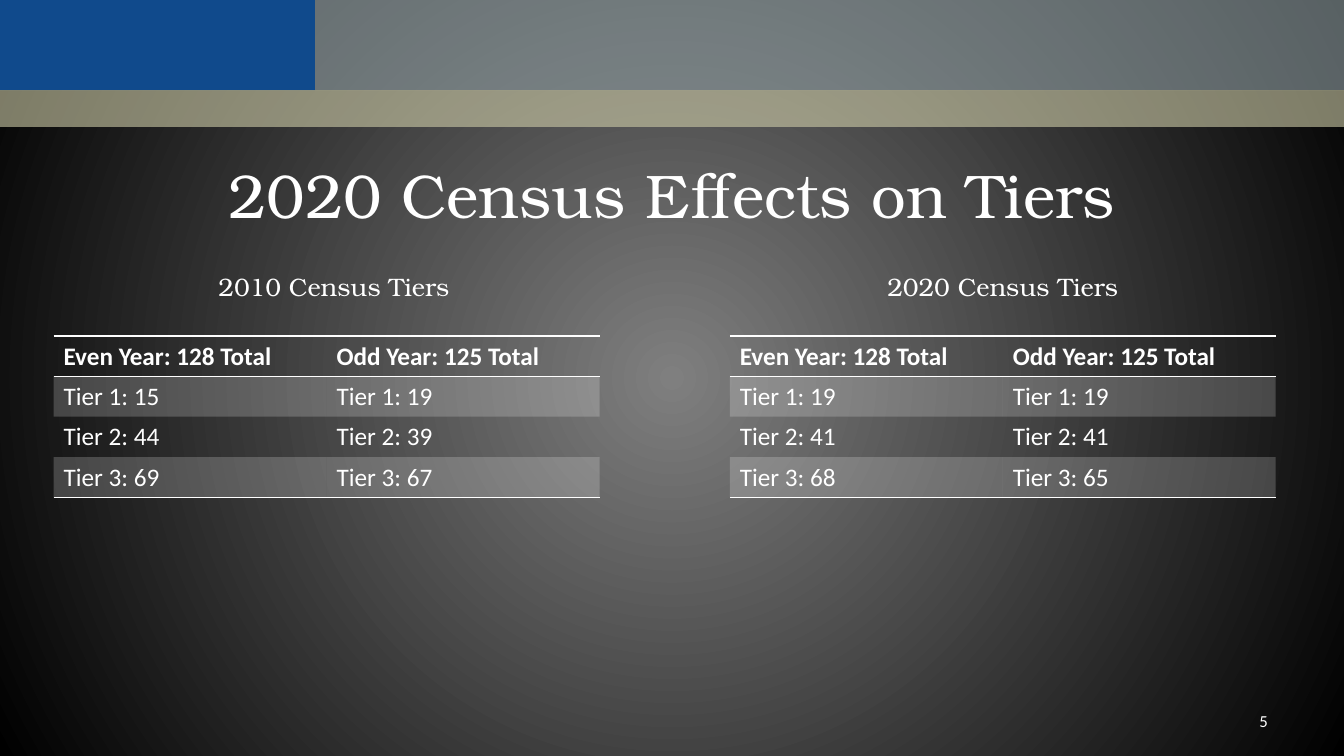
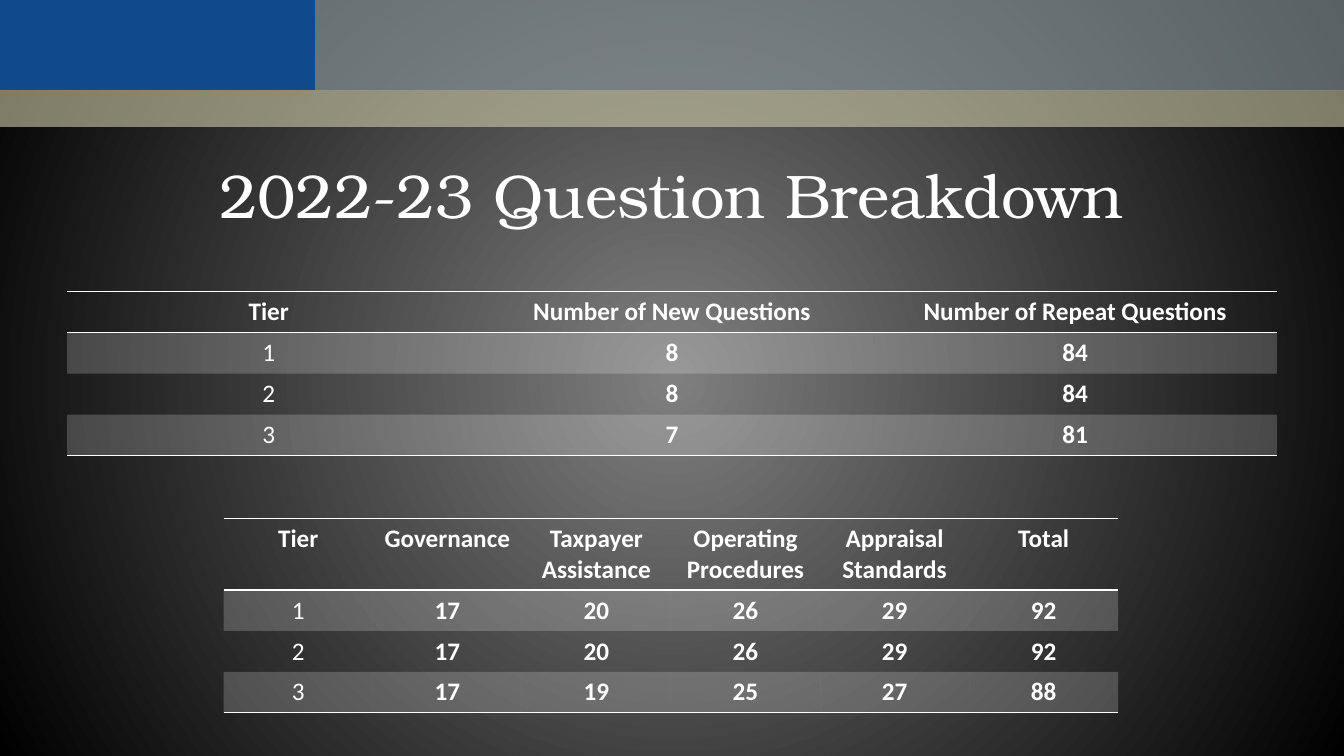
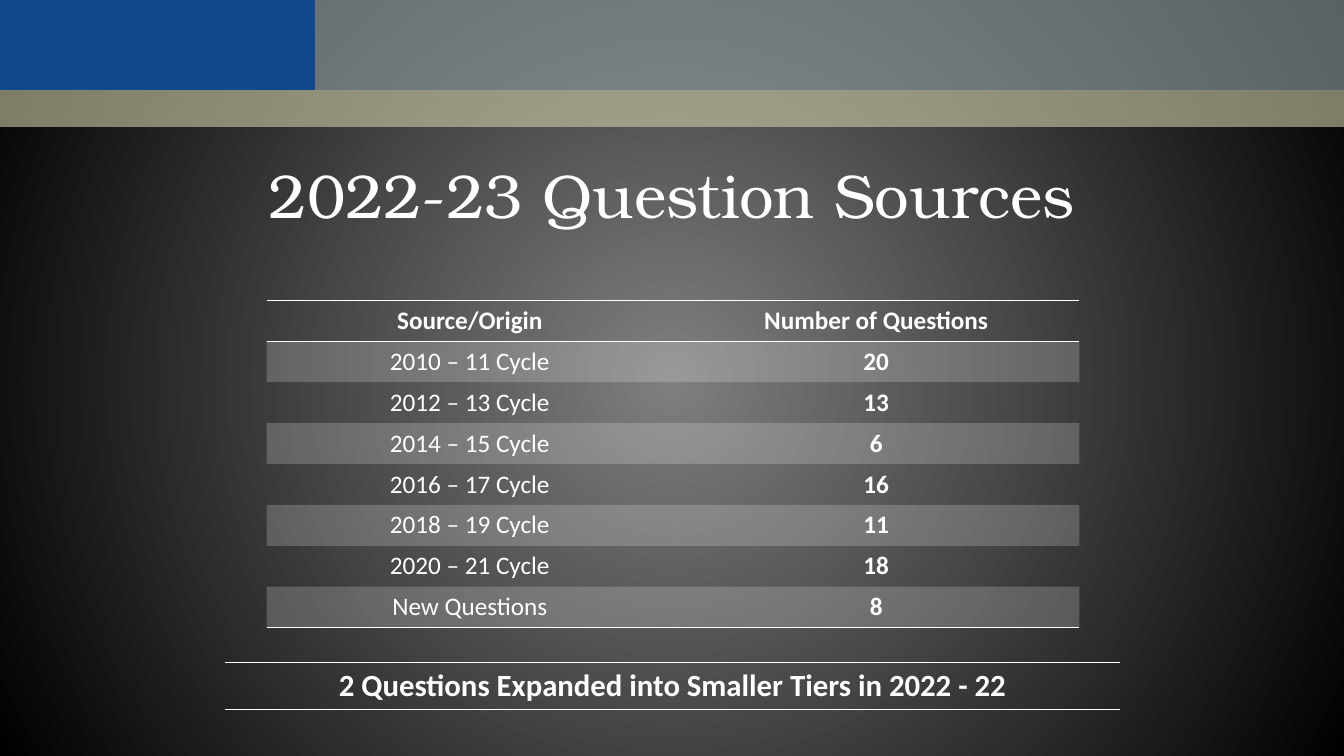
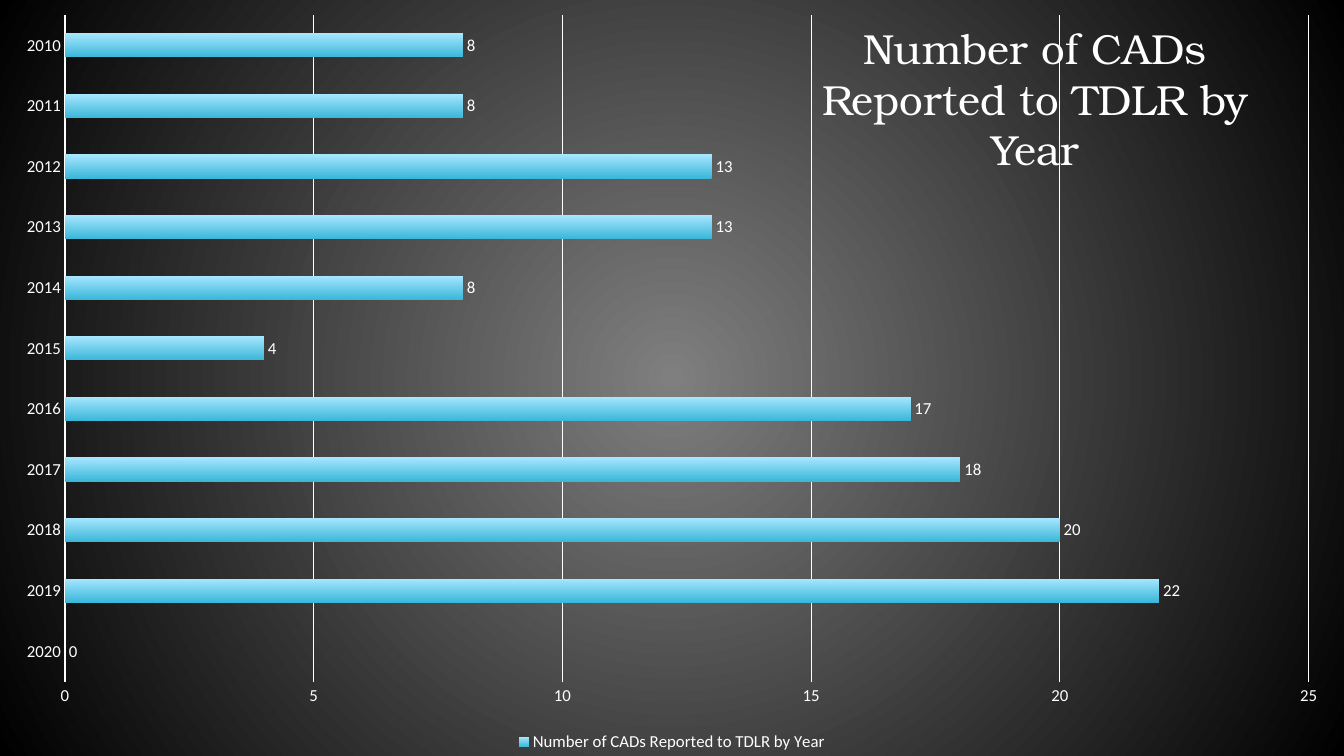
from lxml import etree
from pptx import Presentation
from pptx.chart.data import CategoryChartData
from pptx.dml.color import RGBColor
from pptx.enum.chart import XL_CHART_TYPE, XL_LABEL_POSITION, XL_LEGEND_POSITION, XL_TICK_MARK
from pptx.enum.shapes import MSO_SHAPE
from pptx.enum.text import MSO_ANCHOR, PP_ALIGN
from pptx.oxml.ns import qn
from pptx.util import Emu, Pt

LEFT, CENTER, RIGHT = PP_ALIGN.LEFT, PP_ALIGN.CENTER, PP_ALIGN.RIGHT
TOP, MIDDLE = MSO_ANCHOR.TOP, MSO_ANCHOR.MIDDLE
RECTANGLE = MSO_SHAPE.RECTANGLE
BAR_CLUSTERED = XL_CHART_TYPE.BAR_CLUSTERED
OUTSIDE_END = XL_LABEL_POSITION.OUTSIDE_END
LEGEND_BOTTOM = XL_LEGEND_POSITION.BOTTOM
NO_TICK = XL_TICK_MARK.NONE

EMU_PER_PX = 9525
WIDTH, HEIGHT = 1280, 720
BODY_FONT, HEADING_FONT = "Calibri", "TeX Gyre Bonum"
PLAIN_TABLE_STYLE = "{2D5ABB26-0587-4C30-8999-92F81FD0307C}"
BLANK_LAYOUT = 6

COLORS = {
    "text": "FFFFFF",
    "glow": "7F7F7F",
    "edge": "000000",
    "blue": "104A8C",
    "slate": "919FA3",
    "sand": "CECCA8",
    "bar_bottom": "39B7D8",
    "bar_top": "A7E6FF",
}

BANDS = [
    ((0, 0, 300, 86), "blue", 100),
    ((300, 0, WIDTH - 300, 86), "slate", 61),
    ((0, 86, WIDTH, 35), "sand", 60),
]
STRIPE_OPACITY = 20

TITLE_AT = (64, 125, 1152, 120)
TITLE = {"size": 44, "font": HEADING_FONT, "anchor": MIDDLE}
SUBHEADING = {"size": 18, "font": HEADING_FONT}
CHART_TITLE = {"size": 30, "font": HEADING_FONT}
PAGE_NUMBER = {"size": 12, "align": RIGHT, "anchor": MIDDLE}

YEAR_TOTALS = ["Even Year: 128 Total", "Odd Year: 125 Total"]

TABLE_SLIDES = [
    {
        "title": "2020 Census Effects on Tiers",
        "texts": [
            ("5", (918, 667, 299, 38), PAGE_NUMBER),
            ("2010 Census Tiers", (64, 254, 508, 38), SUBHEADING),
            ("2020 Census Tiers", (695, 254, 520, 38), SUBHEADING),
        ],
        "tables": [
            {
                "at": (51, 320), "column": 260, "row": 38, "align": LEFT, "bold_values": False,
                "rows": [
                    YEAR_TOTALS,
                    ["Tier 1: 15", "Tier 1: 19"],
                    ["Tier 2: 44", "Tier 2: 39"],
                    ["Tier 3: 69", "Tier 3: 67"],
                ],
            },
            {
                "at": (695, 320), "column": 260, "row": 38, "align": LEFT, "bold_values": False,
                "rows": [
                    YEAR_TOTALS,
                    ["Tier 1: 19", "Tier 1: 19"],
                    ["Tier 2: 41", "Tier 2: 41"],
                    ["Tier 3: 68", "Tier 3: 65"],
                ],
            },
        ],
    },
    {
        "title": "2022-23 Question Breakdown",
        "tables": [
            {
                "at": (64, 278), "column": 384,
                "rows": [
                    ["Tier", "Number of New Questions", "Number of Repeat Questions"],
                    ["1", "8", "84"],
                    ["2", "8", "84"],
                    ["3", "7", "81"],
                ],
            },
            {
                "at": (213, 494), "column": 142, "header": 68,
                "rows": [
                    ["Tier", "Governance", "Taxpayer Assistance", "Operating Procedures",
                     "Appraisal Standards", "Total"],
                    ["1", "17", "20", "26", "29", "92"],
                    ["2", "17", "20", "26", "29", "92"],
                    ["3", "17", "19", "25", "27", "88"],
                ],
            },
        ],
    },
    {
        "title": "2022-23 Question Sources",
        "tables": [
            {
                "at": (254, 286), "column": 387,
                "rows": [
                    ["Source/Origin", "Number of Questions"],
                    ["2010 – 11 Cycle", "20"],
                    ["2012 – 13 Cycle", "13"],
                    ["2014 – 15 Cycle", "6"],
                    ["2016 – 17 Cycle", "16"],
                    ["2018 – 19 Cycle", "11"],
                    ["2020 – 21 Cycle", "18"],
                    ["New Questions", "8"],
                ],
            },
            {
                "at": (214, 631), "column": 853, "header": 45, "size": 22,
                "rows": [["2 Questions Expanded into Smaller Tiers in 2022 - 22"]],
            },
        ],
    },
]

REPORTS_TITLE = "Number of CADs Reported to TDLR by Year"
REPORTS_TITLE_AT = (732, 17, 508, 156)
REPORTS = {
    "2020": 0, "2019": 22, "2018": 20, "2017": 18, "2016": 17, "2015": 4,
    "2014": 8, "2013": 13, "2012": 13, "2011": 8, "2010": 8,
}


def px(*lengths):
    return [Emu(length * EMU_PER_PX) for length in lengths]


def rgb(name):
    return RGBColor.from_string(COLORS[name])


def apply(target, values):
    for name, value in values.items():
        setattr(target, name, value)


def style_font(font, size, name=BODY_FONT, bold=False):
    apply(font, {"size": Pt(size), "name": name, "bold": bold})
    font.color.rgb = rgb("text")


def fill_solid(owner, color, opacity=100):
    owner.fill.solid()
    owner.fill.fore_color.rgb = rgb(color)
    if opacity < 100:
        properties = owner.fill._xPr
        color_element = properties.find(qn("a:solidFill")).find(qn("a:srgbClr"))
        etree.SubElement(color_element, qn("a:alpha"), val=str(opacity * 1000))


def fill_gradient(owner, colors):
    owner.fill.gradient()
    for stop, color in zip(owner.fill.gradient_stops, colors):
        stop.color.rgb = rgb(color)


def set_background(master):
    fill_gradient(master.background, ["glow", "edge"])
    gradient = next(master.element.iter(qn("a:gradFill")))
    circle = etree.Element(qn("a:path"), path="circle")
    etree.SubElement(circle, qn("a:fillToRect"), l="50000", t="50000", r="50000", b="50000")
    gradient.replace(gradient.find(qn("a:lin")), circle)


def add_text(slide, text, at, size, font=BODY_FONT, align=CENTER, anchor=TOP):
    frame = slide.shapes.add_textbox(*px(*at)).text_frame
    apply(frame, {"word_wrap": True, "vertical_anchor": anchor, "text": text})
    paragraph = frame.paragraphs[0]
    paragraph.alignment = align
    style_font(paragraph.runs[0].font, size, font)


def add_bands(slide):
    for at, color, opacity in BANDS:
        band = slide.shapes.add_shape(RECTANGLE, *px(*at))
        band.shadow.inherit = False
        band.line.fill.background()
        fill_solid(band, color, opacity)


def add_rule(cell, side):
    rule = etree.SubElement(cell._tc.get_or_add_tcPr(), qn(f"a:ln{side}"), w=str(Pt(1)))
    solid = etree.SubElement(rule, qn("a:solidFill"))
    etree.SubElement(solid, qn("a:srgbClr"), val=COLORS["text"])


def add_grid(slide, at, column, rows, row=39, header=None, size=18, align=CENTER, bold_values=True):
    heights = [header or row] + [row] * (len(rows) - 1)
    columns = len(rows[0])
    frame = slide.shapes.add_table(len(rows), columns, *px(*at, column * columns, sum(heights)))
    next(frame.element.iter(qn("a:tableStyleId"))).text = PLAIN_TABLE_STYLE
    grid = frame.table
    for grid_column in grid.columns:
        grid_column.width = px(column)[0]
    for r, (labels, height) in enumerate(zip(rows, heights)):
        grid.rows[r].height = px(height)[0]
        for c, label in enumerate(labels):
            cell = grid.cell(r, c)
            cell.text = label
            paragraph = cell.text_frame.paragraphs[0]
            paragraph.alignment = align
            style_font(paragraph.runs[0].font, size, bold=r == 0 or (bold_values and c > 0))
            if r == 0:
                add_rule(cell, "T")
            if r in (0, len(rows) - 1):
                add_rule(cell, "B")
            if r % 2:
                fill_solid(cell, "text", STRIPE_OPACITY)
            else:
                cell.fill.background()


def add_reports_chart(slide):
    data = CategoryChartData()
    data.categories = list(REPORTS)
    data.add_series(REPORTS_TITLE, list(REPORTS.values()))
    chart = slide.shapes.add_chart(BAR_CLUSTERED, *px(0, 0, WIDTH, HEIGHT), data).chart
    apply(chart, {"has_title": False, "has_legend": True})
    style_font(chart.font, 10)
    apply(chart.legend, {"position": LEGEND_BOTTOM, "include_in_layout": False})

    plot = chart.plots[0]
    apply(plot, {"gap_width": 150, "vary_by_categories": False, "has_data_labels": True})
    apply(plot.data_labels, {"show_value": True, "position": OUTSIDE_END})
    bars = plot.series[0].format
    fill_gradient(bars, ["bar_bottom", "bar_top"])
    bars.fill.gradient_angle = 90

    years, counts = chart.category_axis, chart.value_axis
    for axis in (years, counts):
        apply(axis, {"major_tick_mark": NO_TICK, "minor_tick_mark": NO_TICK})
    for part in (chart.legend.font, plot.data_labels.font, years.tick_labels.font, counts.tick_labels.font):
        style_font(part, 12)
    apply(counts, {"minimum_scale": 0, "maximum_scale": 25, "major_unit": 5, "has_major_gridlines": True})
    counts.format.line.fill.background()
    for line, width in ((years.format.line, 1), (counts.major_gridlines.format.line, 0.75)):
        line.width = Pt(width)
        line.color.rgb = rgb("text")


def main():
    deck = Presentation()
    deck.slide_width, deck.slide_height = px(WIDTH, HEIGHT)
    set_background(deck.slide_master)
    blank = deck.slide_layouts[BLANK_LAYOUT]

    for content in TABLE_SLIDES:
        slide = deck.slides.add_slide(blank)
        add_bands(slide)
        add_text(slide, content["title"], TITLE_AT, **TITLE)
        for text, at, style in content.get("texts", []):
            add_text(slide, text, at, **style)
        for table in content["tables"]:
            add_grid(slide, **table)

    reports = deck.slides.add_slide(blank)
    add_reports_chart(reports)
    add_text(reports, REPORTS_TITLE, REPORTS_TITLE_AT, **CHART_TITLE)
    deck.save("out.pptx")


if __name__ == "__main__":
    main()
